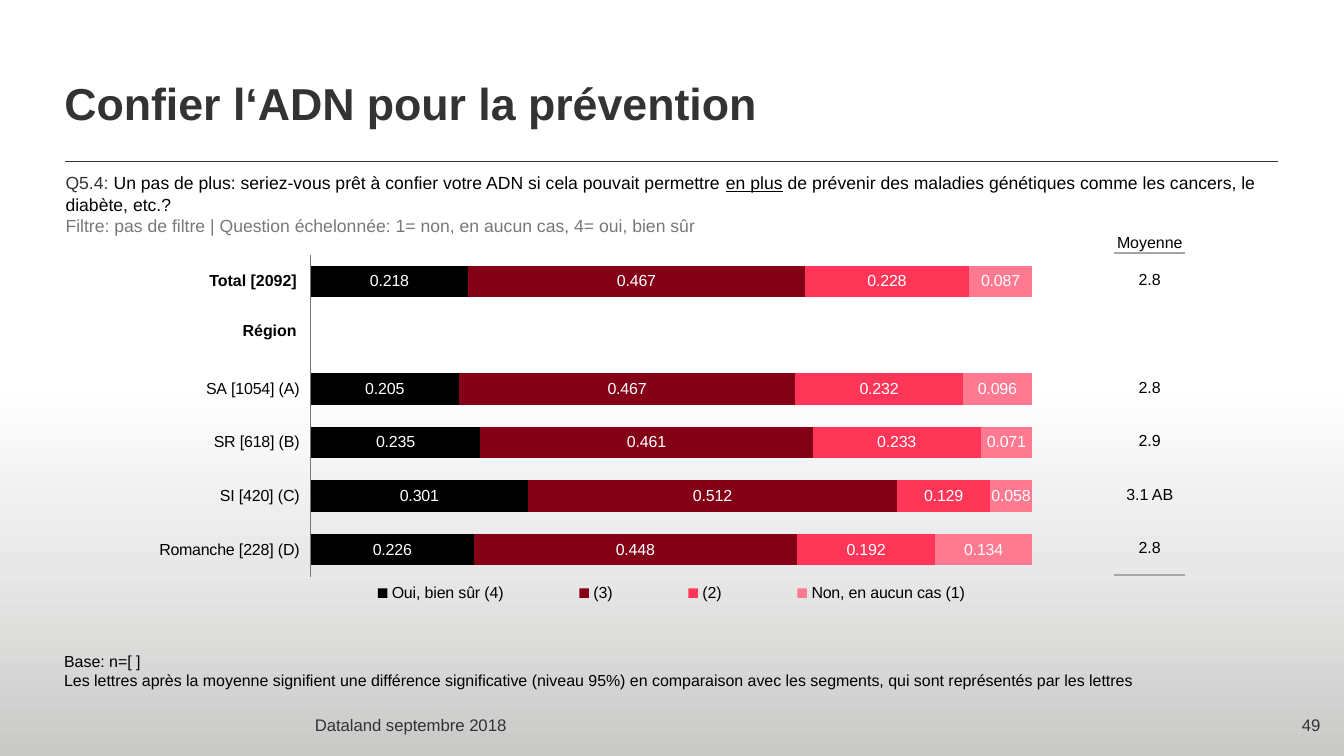
from copy import deepcopy
from dataclasses import dataclass

from lxml import etree
from pptx import Presentation
from pptx.chart.data import CategoryChartData
from pptx.dml.color import RGBColor
from pptx.enum.chart import XL_CHART_TYPE, XL_LEGEND_POSITION, XL_TICK_LABEL_POSITION, XL_TICK_MARK
from pptx.enum.shapes import MSO_CONNECTOR, MSO_SHAPE
from pptx.enum.text import MSO_ANCHOR, PP_ALIGN
from pptx.oxml import parse_xml
from pptx.oxml.ns import nsdecls, qn
from pptx.util import Inches, Pt

STACKED = XL_CHART_TYPE.BAR_STACKED_100
BOTTOM_LEGEND = XL_LEGEND_POSITION.BOTTOM
LABELS_LOW = XL_TICK_LABEL_POSITION.LOW
NO_TICK = XL_TICK_MARK.NONE
STRAIGHT = MSO_CONNECTOR.STRAIGHT
RECTANGLE = MSO_SHAPE.RECTANGLE
TOP, MIDDLE, BOTTOM = MSO_ANCHOR.TOP, MSO_ANCHOR.MIDDLE, MSO_ANCHOR.BOTTOM
LEFT, CENTER, RIGHT = PP_ALIGN.LEFT, PP_ALIGN.CENTER, PP_ALIGN.RIGHT
FONT = "Arial"
COLORS = {
    "black": "000000", "white": "FFFFFF", "ink": "333333", "muted": "787878",
    "rule": "A6A6A6", "base": "C9C9C8", "mist": "E8E8E8",
    "dark_red": "830017", "red": "FF3658", "pink": "FF7990",
}
NO_STYLE = "{2D5ABB26-0587-4C30-8999-92F81FD0307C}"


@dataclass
class Run:
    text: str
    color: str = "black"
    bold: bool = False
    underline: bool = False


@dataclass
class Label:
    box: tuple[float, float, float, float]
    lines: list[list[Run]]
    size: float = 10
    align: PP_ALIGN = LEFT
    anchor: MSO_ANCHOR = TOP
    margins: tuple[float, float] = (0, 0)
    wrap: bool = True


@dataclass
class Answer:
    name: str
    shares: list[float | None]
    color: str


LABELS = [
    Label((11.26, 6.21, 0.29, 0.18), [[Run("49", "ink")]], 10.5, CENTER, MIDDLE, wrap=False),
    Label((2.64, 6.17, 4.23, 0.28), [[Run("Dataland septembre 2018", "ink")]], 10.5, margins=(0.1, 0.05)),
    Label((0.57, 1.5, 10.55, 0.56), [
        [Run("Q5.4: ", "ink"),
         Run("Un pas de plus: seriez-vous prêt à confier votre ADN si cela pouvait permettre "),
         Run("en plus", underline=True),
         Run(" de prévenir des maladies génétiques comme les cancers, le diabète, etc.?")],
        [Run("Filtre: pas de filtre | Question échelonnée: 1= non, en aucun cas, 4= oui, bien sûr", "muted")],
    ], 11),
    Label((1.02, 2.35, 1.56, 0.17), [[Run("Total [2092]", bold=True)]], align=RIGHT, anchor=MIDDLE),
    Label((1.02, 2.79, 1.56, 0.17), [[Run("Région", bold=True)]], align=RIGHT, anchor=MIDDLE),
    Label((0.46, 5.66, 10.67, 0.34), [
        [Run("Base: n=[ ]")],
        [Run("Les lettres après la moyenne signifient une différence significative (niveau 95%) "
             "en comparaison avec les segments, qui sont représentés par les lettres")],
    ], anchor=BOTTOM, margins=(0.1, 0)),
]
CATEGORIES = ["", "", "SA [1054] (A)", "SR [618] (B)", "SI [420] (C)", "Romanche [228] (D)"]
ANSWERS = [
    Answer("Oui, bien sûr (4)", [0.218, None, 0.205, 0.235, 0.301, 0.226], "black"),
    Answer("(3)", [0.467, None, 0.467, 0.461, 0.512, 0.448], "dark_red"),
    Answer("(2)", [0.228, None, 0.232, 0.233, 0.129, 0.192], "red"),
    Answer("Non, en aucun cas (1)", [0.087, None, 0.096, 0.071, 0.058, 0.134], "pink"),
]
MEANS = ["Moyenne", "2.8", "", "2.8", "2.9", "3.1 AB", "2.8"]


def rgb(name: str) -> RGBColor:
    return RGBColor.from_string(COLORS[name])


def style_font(font, size: float, color: str, bold: bool = False) -> None:
    font.name, font.size, font.bold = FONT, Pt(size), bold
    font.color.rgb = rgb(color)


def set_margins(frame, side: float, top: float, bottom: float) -> None:
    frame.margin_left = frame.margin_right = Inches(side)
    frame.margin_top, frame.margin_bottom = Inches(top), Inches(bottom)


def add_background(slide) -> None:
    sp = slide.shapes.add_shape(RECTANGLE, 0, Inches(3.29), Inches(11.69), Inches(3.29))
    sp.shadow.inherit = False
    sp.line.fill.background()
    sp.fill.gradient()
    sp.fill.gradient_angle = 90
    stop_list = sp._element.spPr.find(".//" + qn("a:gsLst"))
    stop_list.insert(1, deepcopy(stop_list[0]))
    for stop, color, position in zip(sp.fill.gradient_stops, ("base", "mist", "white"), (0, 0.5, 1)):
        stop.color.rgb = rgb(color)
        stop.position = position


def add_title(slide) -> None:
    title = slide.shapes.title
    title.left, title.top, title.width, title.height = map(Inches, (0.56, 0.66, 10.56, 0.47))
    tf = title.text_frame
    tf.text = "Confier l‘ADN pour la prévention"
    tf.vertical_anchor = BOTTOM
    set_margins(tf, 0, 0, 0)
    p = tf.paragraphs[0]
    p.alignment = LEFT
    style_font(p.runs[0].font, 28, "ink", True)


def add_rule(slide) -> None:
    y = Inches(1.4)
    rule = slide.shapes.add_connector(STRAIGHT, Inches(0.57), y, Inches(11.12), y)
    rule.line.color.rgb = rgb("ink")
    rule.line.width = Pt(0.5)
    etree.SubElement(rule._element.spPr, qn("a:effectLst"))


def add_label(slide, label: Label) -> None:
    tf = slide.shapes.add_textbox(*map(Inches, label.box)).text_frame
    tf.word_wrap = label.wrap
    tf.vertical_anchor = label.anchor
    side, edge = label.margins
    set_margins(tf, side, edge, edge)
    for i, line in enumerate(label.lines):
        p = tf.add_paragraph() if i else tf.paragraphs[0]
        p.alignment = label.align
        for run in line:
            r = p.add_run()
            r.text = run.text
            style_font(r.font, label.size, run.color, run.bold)
            r.font.underline = run.underline


def set_layout(parent, index: int, box: tuple[float, float, float, float], target: str = "") -> None:
    for old in parent.findall(qn("c:layout")):
        parent.remove(old)
    layout = etree.Element(qn("c:layout"))
    manual = etree.SubElement(layout, qn("c:manualLayout"))
    values = {"layoutTarget": target} if target else {}
    values |= {"xMode": "edge", "yMode": "edge"} | dict(zip("xywh", map(str, box)))
    for tag, value in values.items():
        etree.SubElement(manual, qn("c:" + tag)).set("val", value)
    parent.insert(index, layout)


def add_answer_chart(slide) -> None:
    data = CategoryChartData()
    data.categories = CATEGORIES
    for answer in ANSWERS:
        data.add_series(answer.name, answer.shares)
    chart = slide.shapes.add_chart(STACKED, *map(Inches, (0.56, 2.15, 10.56, 3.44)), data).chart
    style_font(chart.font, 18, "black")
    chart.has_title = False
    chart.has_legend = True
    chart.legend.position = BOTTOM_LEGEND
    chart.legend.include_in_layout = False
    style_font(chart.legend.font, 10, "black")
    axis = chart.category_axis
    axis.reverse_order = True
    axis.major_tick_mark = axis.minor_tick_mark = NO_TICK
    axis.tick_label_position = LABELS_LOW
    axis.tick_labels.offset = 0
    axis.format.line.color.rgb = rgb("muted")
    style_font(axis.tick_labels.font, 10, "black")
    chart.value_axis.visible = False
    chart.value_axis.has_major_gridlines = False
    chart.value_axis.minimum_scale, chart.value_axis.maximum_scale = 0, 1
    plot = chart.plots[0]
    plot.gap_width, plot.overlap, plot.vary_by_categories = 70, 100, False
    for series, answer in zip(plot.series, ANSWERS):
        series.format.fill.solid()
        series.format.fill.fore_color.rgb = rgb(answer.color)
        series.data_labels.show_value = True
        style_font(series.data_labels.font, 10, "white")
    set_layout(chart._chartSpace.chart.plotArea, 0, (0.203, 0.019, 0.594, 0.814), "inner")
    set_layout(chart.legend._element, 1, (0.2, 0.84, 0.6, 0.07))


def add_bottom_border(cell) -> None:
    border = parse_xml(f'<a:lnB {nsdecls("a")} w="{Pt(1.5)}"><a:solidFill>'
                       f'<a:srgbClr val="{COLORS["rule"]}"/></a:solidFill></a:lnB>')
    cell._tc.get_or_add_tcPr().insert(0, border)


def add_means_table(slide) -> None:
    header, total = Inches(0.18), Inches(2.98)
    frame = slide.shapes.add_table(len(MEANS), 1, Inches(9.69), Inches(2.02), Inches(0.62), total)
    table = frame.table
    table.first_row = table.horz_banding = False
    table._tbl.tblPr.find(qn("a:tableStyleId")).text = NO_STYLE
    for i, mean in enumerate(MEANS):
        table.rows[i].height = (total - header) // (len(MEANS) - 1) if i else header
        cell = table.cell(i, 0)
        cell.text = mean
        cell.vertical_anchor = MIDDLE
        cell.fill.background()
        set_margins(cell, 0.01 if i else 0, 0.01 if i else 0, 0)
        p = cell.text_frame.paragraphs[0]
        p.alignment = CENTER
        for r in p.runs:
            style_font(r.font, 10, "black")
    for row in (0, len(MEANS) - 1):
        add_bottom_border(table.cell(row, 0))


def main() -> None:
    prs = Presentation()
    prs.slide_width = Inches(11.69)
    prs.slide_height = prs.slide_width * 9 // 16
    slide = prs.slides.add_slide(prs.slide_layouts[5])
    add_background(slide)
    add_title(slide)
    add_rule(slide)
    add_answer_chart(slide)
    for label in LABELS:
        add_label(slide, label)
    add_means_table(slide)
    prs.save("out.pptx")


if __name__ == "__main__":
    main()
